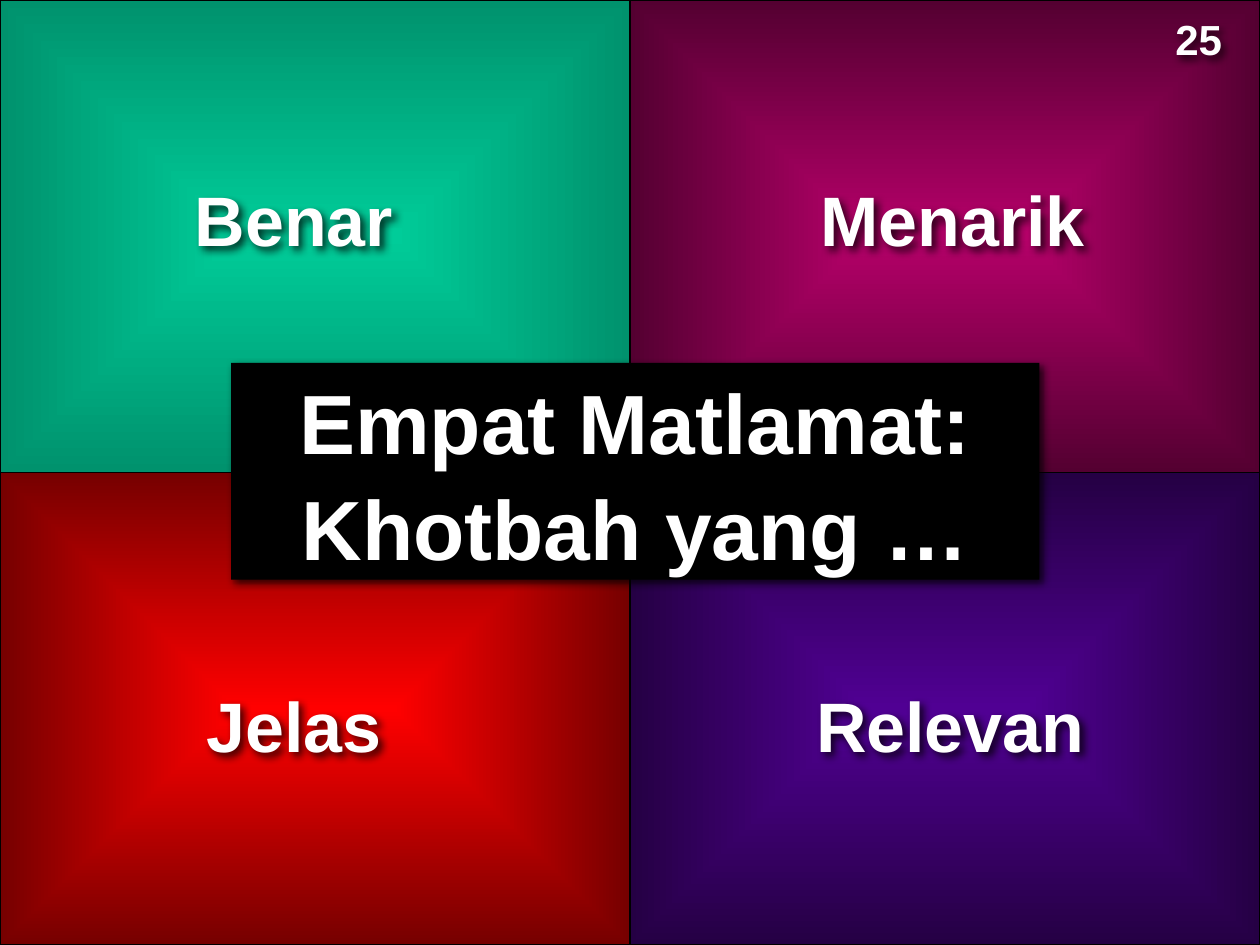
from dataclasses import dataclass

from lxml.etree import SubElement as Sub
from pptx import Presentation
from pptx.dml.color import RGBColor as Rgb
from pptx.enum.shapes import MSO_SHAPE as Shape
from pptx.enum.text import MSO_ANCHOR as Anchor, MSO_AUTO_SIZE as Fit, PP_ALIGN as Align
from pptx.oxml.ns import qn
from pptx.util import Pt


@dataclass(frozen=True)
class Theme:
    """Colours, font and type sizes of the slide."""
    font: str = "Arial"
    ink: str = "FFFFFF"
    dark: str = "000000"
    green: tuple = ("00CC99", "00926D")
    plum: tuple = ("B50069", "540031")
    red: tuple = ("FF0000", "760000")
    violet: tuple = ("500093", "250044")
    head: int = 48
    label: int = 40
    page: int = 24
    lead: float = 1.05


THEME = Theme()
WIDE, HIGH = 720, 540


def place(shape, box):
    """Move and size a shape to a box in points."""
    shape.left, shape.top, shape.width, shape.height = map(Pt, box)


def shade(shape):
    """Give a shape a soft shadow to the lower right."""
    shape.shadow.inherit = False
    glow = shape._element.spPr.find(qn("a:effectLst"))
    drop = Sub(glow, qn("a:outerShdw"), blurRad=str(Pt(5)), dist=str(Pt(3)),
               dir="2700000", algn="tl", rotWithShape="0")
    tint = Sub(drop, qn("a:srgbClr"), val=THEME.dark)
    Sub(tint, qn("a:alpha"), val="75000")


def write(shape, text, size, align=Align.CENTER):
    """Set bold light text in a shape."""
    frame = shape.text_frame
    frame.text = text
    frame.word_wrap = True
    frame.auto_size = Fit.SHAPE_TO_FIT_TEXT
    para = frame.paragraphs[0]
    para.alignment = align
    para.line_spacing = THEME.lead
    for run in para.runs:
        font = run.font
        font.name, font.size, font.bold = THEME.font, Pt(size), True
        font.color.rgb = Rgb.from_string(THEME.ink)


def add_text(slide, box, text, size, align=Align.CENTER):
    """Add a shaded text box."""
    note = slide.shapes.add_textbox(*map(Pt, box))
    write(note, text, size, align)
    shade(note)


def add_panel(slide, box, tones):
    """Add a panel with a gradient that glows from its centre."""
    panel = slide.shapes.add_shape(Shape.RECTANGLE, *map(Pt, box))
    panel.shadow.inherit = False
    panel.line.color.rgb = Rgb.from_string(THEME.dark)
    panel.line.width = Pt(1)
    panel.fill.gradient()
    for stop, tone in zip(panel.fill.gradient_stops, tones):
        stop.color.rgb = Rgb.from_string(tone)
    grad = panel._element.spPr.find(qn("a:gradFill"))
    grad.remove(grad.find(qn("a:lin")))
    path = Sub(grad, qn("a:path"), path="shape")
    Sub(path, qn("a:fillToRect"), **dict.fromkeys("ltrb", "50000"))


def add_goal(slide, box, tones, text, inset):
    """Add a panel and its label, set in from the panel's corner."""
    left, top, wide, high = box
    add_panel(slide, box, tones)
    dx, dy, span = inset
    add_text(slide, (left + dx, top + dy, span, 55.4), text, THEME.label)


def add_head(slide, box, text):
    """Bring the title forward as a dark banner."""
    head = slide.shapes.title
    slide.shapes._spTree.append(head._element)
    place(head, box)
    head.fill.solid()
    head.fill.fore_color.rgb = Rgb.from_string(THEME.dark)
    write(head, text, THEME.head)
    head.text_frame.vertical_anchor = Anchor.MIDDLE
    shade(head)


def build():
    """Build the slide and save it."""
    deck = Presentation()
    deck.slide_width, deck.slide_height = Pt(WIDE), Pt(HIGH)
    slide = deck.slides.add_slide(deck.slide_layouts[5])
    back = slide.background.fill
    back.solid()
    back.fore_color.rgb = Rgb.from_string(THEME.dark)
    goals = (
        ("Benar", THEME.green, (93, 95, 150)),
        ("Menarik", THEME.plum, (54, 95, 260.6)),
        ("Jelas", THEME.red, (60, 114, 216)),
        ("Relevan", THEME.violet, (75, 114, 216)),
    )
    wide, high = WIDE / 2, HIGH / 2
    for i, (text, tones, inset) in enumerate(goals):
        row, col = divmod(i, 2)
        add_goal(slide, (col * wide, row * high, wide, high), tones, text, inset)
    add_head(slide, (132, 207.4, 462, 123.8), "Empat Matlamat:\vKhotbah yang …")
    add_text(slide, (664.6, 3, 55.4, 36), "25", THEME.page, Align.LEFT)
    deck.save("out.pptx")


if __name__ == "__main__":
    build()
